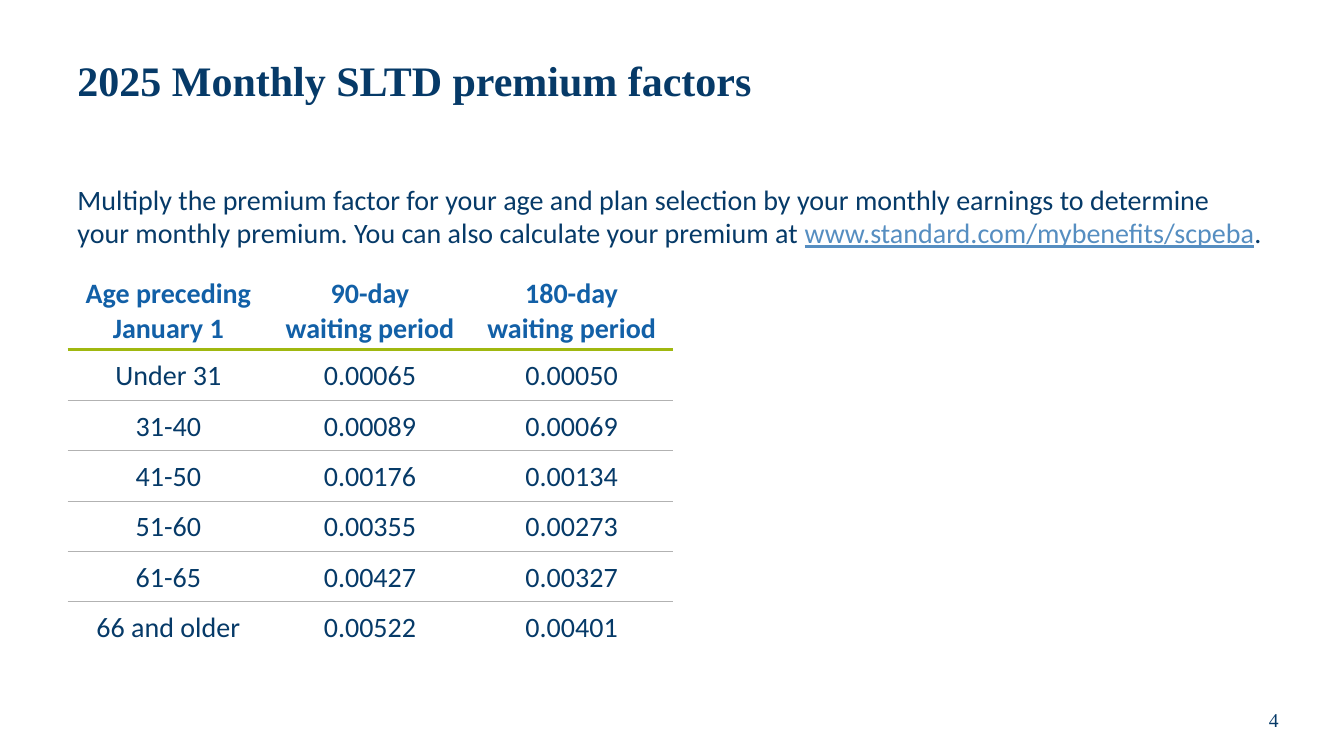
from dataclasses import dataclass

from lxml import etree
from pptx import Presentation
from pptx.dml.color import RGBColor
from pptx.enum import text
from pptx.oxml import ns
from pptx.util import Pt

EMU_PER_PX = 9144  # 100 px to the inch


@dataclass(frozen=True)
class Theme:
    navy: str = "063A68"
    blue: str = "1260A7"
    link: str = "568EC1"
    green: str = "A0B810"
    grey: str = "B2B2B2"
    heading_font: str = "Times New Roman"
    body_font: str = "Calibri"
    title_size: int = 30
    body_size: int = 20
    number_size: int = 14
    header_rule: float = 2.25
    row_rule: float = 0.5


THEME = Theme()
HEADERS = ("Age preceding\nJanuary 1", "90-day\nwaiting period", "180-day\nwaiting period")
FACTORS = (
    ("Under 31", "0.00065", "0.00050"),
    ("31-40", "0.00089", "0.00069"),
    ("41-50", "0.00176", "0.00134"),
    ("51-60", "0.00355", "0.00273"),
    ("61-65", "0.00427", "0.00327"),
    ("66 and older", "0.00522", "0.00401"),
)
COLUMN_WIDTH, HEADER_HEIGHT, ROW_HEIGHT = 200, 77, 50
NO_GRID_STYLE = "{2D5ABB26-0587-4C30-8999-92F81FD0307C}"


def px(length):
    return int(length * EMU_PER_PX)


def write(paragraph, words, size=THEME.body_size, font=THEME.body_font,
          color=THEME.navy, bold=False, underline=False, align=None, spacing=None):
    """Append words to a paragraph; a newline becomes a line break."""
    if align is not None:
        paragraph.alignment = align
    if spacing is not None:
        paragraph.line_spacing = spacing
    for index, line in enumerate(words.split("\n")):
        if index:
            paragraph.add_line_break()
        run = paragraph.add_run()
        run.text = line
        run.font.size = Pt(size)
        run.font.name = font
        run.font.bold = bold
        run.font.underline = underline
        run.font.color.rgb = RGBColor.from_string(color)


def add_paragraph_box(slide, left, top, width, height, anchor=text.MSO_ANCHOR.TOP):
    """Add a wrapping text box and return its first paragraph."""
    frame = slide.shapes.add_textbox(px(left), px(top), px(width), px(height)).text_frame
    frame.word_wrap = True
    frame.vertical_anchor = anchor
    return frame.paragraphs[0]


def set_rules(cell, above, below):
    """Draw the (colour, points) rules of a cell; None leaves an edge bare."""
    edges = [("a:lnL", None), ("a:lnR", None), ("a:lnT", above), ("a:lnB", below)]
    properties = cell._tc.get_or_add_tcPr()
    for position, (tag, rule) in enumerate(edges):
        line = etree.Element(ns.qn(tag))
        if rule:
            color, points = rule
            line.set("w", str(Pt(points)))
            fill = etree.SubElement(line, ns.qn("a:solidFill"))
            etree.SubElement(fill, ns.qn("a:srgbClr"), val=color)
        else:
            etree.SubElement(line, ns.qn("a:noFill"))
        properties.insert(position, line)


def fill_cell(cell, words, above, below, **text_format):
    cell.vertical_anchor = text.MSO_ANCHOR.MIDDLE
    cell.fill.background()
    write(cell.text_frame.paragraphs[0], words, align=text.PP_ALIGN.CENTER, **text_format)
    set_rules(cell, above, below)


def add_factor_table(slide, left, top):
    rows = (HEADERS,) + FACTORS
    height = HEADER_HEIGHT + ROW_HEIGHT * len(FACTORS)
    table = slide.shapes.add_table(
        len(rows), len(HEADERS), px(left), px(top),
        px(COLUMN_WIDTH * len(HEADERS)), px(height)).table
    table.horz_banding = False
    table._tbl.tblPr.find(ns.qn("a:tableStyleId")).text = NO_GRID_STYLE
    for column in table.columns:
        column.width = px(COLUMN_WIDTH)

    header_rule = (THEME.green, THEME.header_rule)
    row_rule = (THEME.grey, THEME.row_rule)
    rules = [None, header_rule] + [row_rule] * (len(FACTORS) - 1) + [None]
    for r, values in enumerate(rows):
        is_header = r == 0
        table.rows[r].height = px(HEADER_HEIGHT if is_header else ROW_HEIGHT)
        for c, value in enumerate(values):
            cell = table.cell(r, c)
            if is_header:
                text_format = {"color": THEME.blue, "bold": True}
            else:
                text_format = {"spacing": 1.07}
                cell.margin_left = cell.margin_right = px(7)
                cell.margin_top = cell.margin_bottom = 0
            fill_cell(cell, value, rules[r], rules[r + 1], **text_format)


def main():
    deck = Presentation()
    deck.slide_width, deck.slide_height = px(1333), px(750)
    slide = deck.slides.add_slide(deck.slide_layouts[6])

    title = add_paragraph_box(slide, 67, 25, 1200, 115, text.MSO_ANCHOR.MIDDLE)
    write(title, "2025 Monthly SLTD premium factors", size=THEME.title_size,
          font=THEME.heading_font, bold=True, spacing=0.9)

    intro = add_paragraph_box(slide, 67, 176, 1200, 90)
    write(intro, "Multiply the premium factor for your age and plan selection by your "
                 "monthly earnings to determine your monthly premium. You can also "
                 "calculate your premium at ")
    write(intro, "www.standard.com/mybenefits/scpeba", color=THEME.link, underline=True)
    write(intro, ".")

    add_factor_table(slide, 67, 270)

    page_number = add_paragraph_box(slide, 1205, 689, 117, 50, text.MSO_ANCHOR.MIDDLE)
    write(page_number, "4", size=THEME.number_size, font=THEME.heading_font,
          align=text.PP_ALIGN.CENTER)

    deck.save("out.pptx")


if __name__ == "__main__":
    main()
